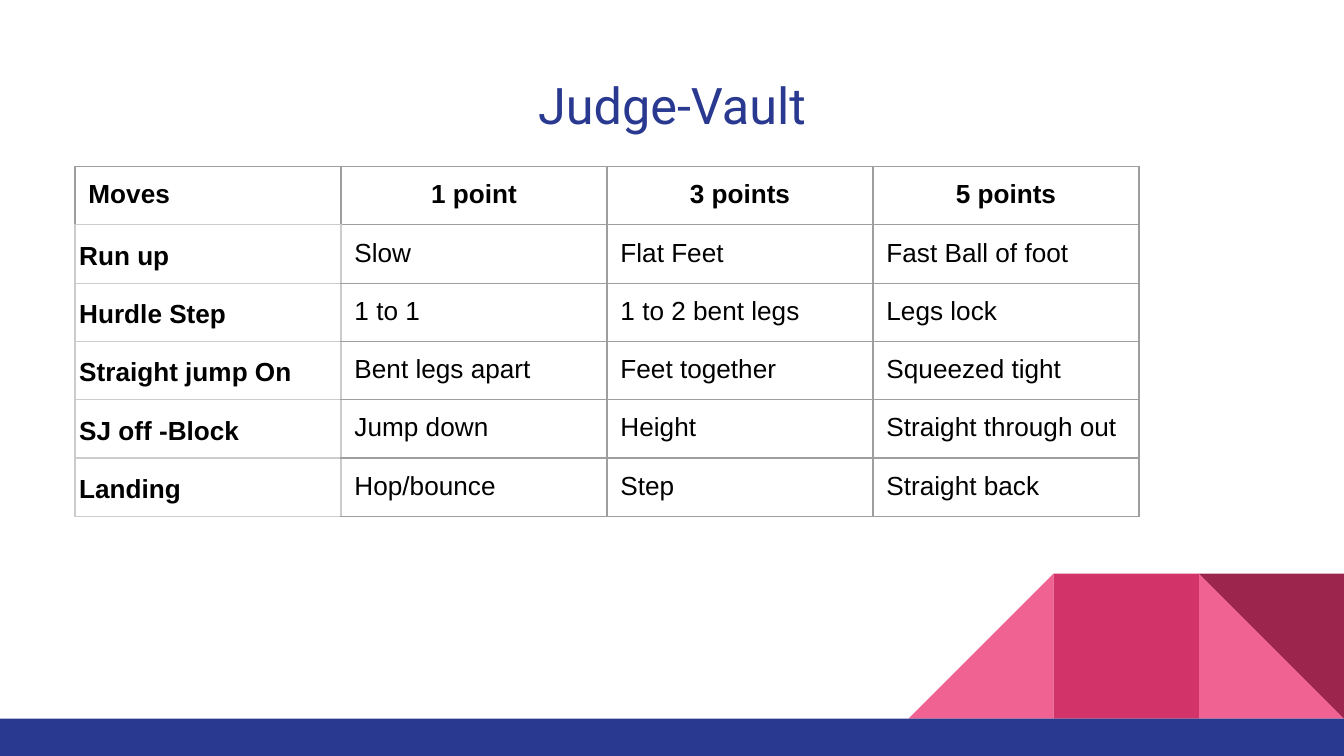
"""Build the Judge-Vault scoring slide."""
import dataclasses

import lxml.etree
import pptx
import pptx.dml.color
import pptx.enum.shapes
import pptx.enum.text
import pptx.oxml.ns
import pptx.util

Pt = pptx.util.Pt
Kind = pptx.enum.shapes.MSO_SHAPE
Align = pptx.enum.text.PP_ALIGN
Anchor = pptx.enum.text.MSO_ANCHOR

NAVY, PINK, ROSE, WINE = "2A3990", "F06292", "D23369", "9C254D"
GRAY, PALE, BLACK = "9E9E9E", "CCCCCC", "000000"
SIDE, FLOOR, WIDTH, HEIGHT = 77.75, 385.0, 720, 405
LEFT, TOP, COL, ROW = 40.2, 89.2, 142.5, 30.1

ROWS = [
    ("Moves", "1 point", "3 points", "5 points"),
    ("Run up", "Slow", "Flat Feet", "Fast Ball of foot"),
    ("Hurdle Step", "1 to 1", "1 to 2 bent legs", "Legs lock"),
    ("Straight jump On", "Bent legs apart", "Feet together", "Squeezed tight"),
    ("SJ off -Block", "Jump down", "Height", "Straight through out"),
    ("Landing", "Hop/bounce", "Step", "Straight back"),
]


@dataclasses.dataclass
class Block:
    kind: int
    left: float
    top: float
    width: float
    height: float
    color: str
    flip: bool = False
    turn: float = 0


def tile(kind: int, slot: int, color: str, flip: bool = False, turn: float = 0) -> Block:
    return Block(kind, WIDTH - slot * SIDE, FLOOR - SIDE, SIDE, SIDE, color, flip, turn)


BLOCKS = [
    tile(Kind.RIGHT_TRIANGLE, 1, PINK),
    tile(Kind.RIGHT_TRIANGLE, 3, PINK, flip=True),
    tile(Kind.RECTANGLE, 2, ROSE),
    tile(Kind.RIGHT_TRIANGLE, 1, WINE, turn=180),
    Block(Kind.RECTANGLE, 0, FLOOR, WIDTH, HEIGHT - FLOOR, NAVY),
]


def rgb(code: str) -> pptx.dml.color.RGBColor:
    return pptx.dml.color.RGBColor.from_string(code)


def style(para, face: str, size: float, color: str, bold: bool = False) -> None:
    font = para.font
    font.name, font.size, font.bold = face, Pt(size), bold
    font.color.rgb = rgb(color)


def draw(slide, block: Block) -> None:
    shape = slide.shapes.add_shape(
        block.kind, Pt(block.left), Pt(block.top), Pt(block.width), Pt(block.height))
    shape.shadow.inherit = False
    shape.fill.solid()
    shape.fill.fore_color.rgb = rgb(block.color)
    shape.line.fill.background()
    shape.rotation = block.turn
    if block.flip:
        shape.element.spPr.xfrm.set("flipH", "1")


def title(slide, text: str) -> None:
    box = slide.shapes.add_textbox(Pt(24.5), Pt(32.4), Pt(671), Pt(47.5))
    frame = box.text_frame
    frame.word_wrap = True
    frame.margin_left = frame.margin_right = Pt(7.2)
    frame.margin_top = frame.margin_bottom = Pt(7.2)
    para = frame.paragraphs[0]
    para.text = text
    para.alignment = Align.CENTER
    style(para, "Roboto", 27, NAVY)


def border(cell, colors: dict[str, str]) -> None:
    props = cell._tc.get_or_add_tcPr()
    qn = pptx.oxml.ns.qn
    for spot, side in enumerate("LRTB"):
        line = lxml.etree.Element(qn(f"a:ln{side}"), w=str(Pt(0.75)))
        fill = lxml.etree.SubElement(line, qn("a:solidFill"))
        lxml.etree.SubElement(fill, qn("a:srgbClr"), val=colors[side])
        props.insert(spot, line)


def edges(row: int, col: int) -> dict[str, str]:
    colors = dict.fromkeys("LRTB", PALE if row and not col else GRAY)
    if row and col == 1:
        colors["L"] = PALE
    if row == col == 0:
        colors["B"] = PALE
    return colors


def write(cell, text: str, row: int, col: int) -> None:
    label = row > 0 and col == 0
    cell.fill.background()
    cell.margin_left = cell.margin_right = Pt(2.25 if label else 7.2)
    cell.margin_top = cell.margin_bottom = Pt(1.5 if label else 7.2)
    cell.vertical_anchor = Anchor.MIDDLE if label else Anchor.TOP
    cell.text = text
    para = cell.text_frame.paragraphs[0]
    style(para, "Arial", 14, BLACK, row == 0 or col == 0)
    para.alignment = Align.CENTER if row == 0 and col else Align.LEFT
    if label:
        para.line_spacing = 1.15
    border(cell, edges(row, col))


def grid(slide, rows: list[tuple[str, ...]]) -> None:
    high, wide = len(rows), len(rows[0])
    table = slide.shapes.add_table(
        high, wide, Pt(LEFT), Pt(TOP), Pt(wide * COL), Pt(high * ROW)).table
    table.first_row = table.horz_banding = False
    for band in table.columns:
        band.width = Pt(COL)
    for row, texts in enumerate(rows):
        table.rows[row].height = Pt(ROW)
        for col, text in enumerate(texts):
            write(table.cell(row, col), text, row, col)


def main() -> None:
    deck = pptx.Presentation()
    deck.slide_width, deck.slide_height = Pt(WIDTH), Pt(HEIGHT)
    slide = deck.slides.add_slide(deck.slide_layouts[6])
    for block in BLOCKS:
        draw(slide, block)
    title(slide, "Judge-Vault")
    grid(slide, ROWS)
    deck.save("out.pptx")


if __name__ == "__main__":
    main()
